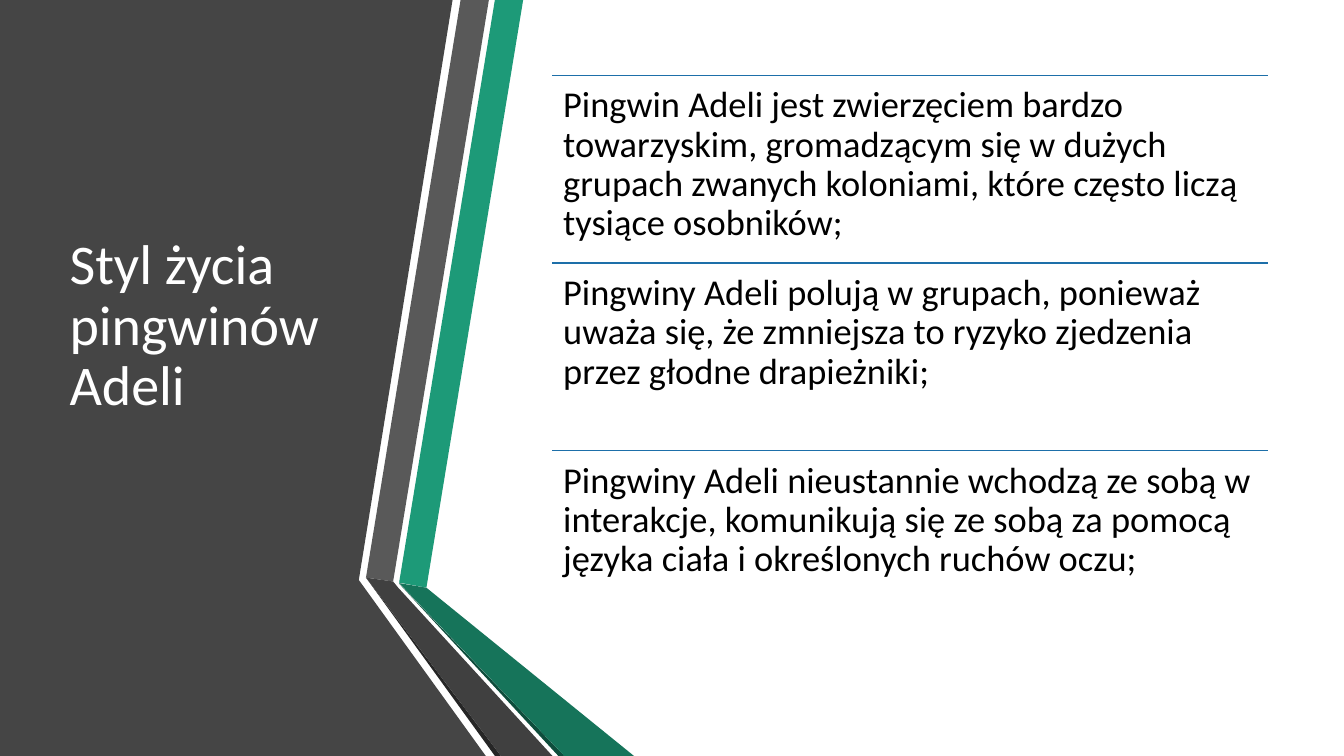
from lxml import etree
from pptx import Presentation
from pptx.dml.color import RGBColor
from pptx.enum.shapes import MSO_CONNECTOR as Connector
from pptx.enum.text import MSO_ANCHOR as Anchor, MSO_AUTO_SIZE as AutoSize, PP_ALIGN as Align
from pptx.oxml.ns import qn
from pptx.util import Pt

FONT = "Calibri"
WHITE = RGBColor(0xFF, 0xFF, 0xFF)
BLACK = RGBColor(0x00, 0x00, 0x00)
PANEL = RGBColor(0x45, 0x45, 0x45)
GREEN = RGBColor(0x1D, 0x9A, 0x78)
GREEN_FOLD = RGBColor(0x16, 0x74, 0x5A)
GREEN_EDGE = RGBColor(0x0E, 0x4D, 0x3C)
GREY = RGBColor(0x59, 0x59, 0x59)
GREY_FOLD = RGBColor(0x40, 0x40, 0x40)
GREY_EDGE = RGBColor(0x26, 0x26, 0x26)
RULE_BLUE = RGBColor(0x1D, 0x6F, 0xA9)

SLIDE_WIDTH, SLIDE_HEIGHT = 960, 540

# Outlines in points, measured from the corner of the panel
PANEL_OUTLINE = [(0, 0), (323.3, 0), (256.3, 414.3), (347, 540), (0, 540)]
RIBBON_PARTS = [
    (GREEN, [(285.1, 416.2), (304.6, 419.8), (373.7, 0), (353.5, 0)]),
    (GREY, [(349.2, 0), (329, 0), (261.4, 412.6), (280.8, 415.4)]),
    (GREY_EDGE, [(261.4, 412.6), (353.5, 540), (357.8, 540)]),
    (GREEN_EDGE, [(285.1, 416.9), (398.9, 540), (403.2, 540)]),
    (GREEN_FOLD, [(285.1, 416.5), (403.2, 540), (452.9, 540), (304.6, 419.8)]),
    (GREY_FOLD, [(394.6, 540), (284.4, 419.8), (280.8, 415.4),
                 (261.4, 412.6), (357.8, 540)]),
]

FACTS = [
    "Pingwin Adeli jest zwierzęciem bardzo towarzyskim, gromadzącym się w dużych "
    "grupach zwanych koloniami, które często liczą tysiące osobników;",
    "Pingwiny Adeli polują w grupach, ponieważ uważa się, że zmniejsza to ryzyko "
    "zjedzenia przez głodne drapieżniki;",
    "Pingwiny Adeli nieustannie wchodzą ze sobą w interakcje, komunikują się ze sobą "
    "za pomocą języka ciała i określonych ruchów oczu;",
]


def write_text(shape, text, *, size, color, anchor, inset, bottom_inset):
    frame = shape.text_frame
    frame.word_wrap = True
    frame.auto_size = AutoSize.NONE
    frame.vertical_anchor = anchor
    frame.margin_left = frame.margin_right = Pt(inset)
    frame.margin_top, frame.margin_bottom = Pt(inset), Pt(bottom_inset)
    paragraph = frame.paragraphs[0]
    paragraph.alignment = Align.LEFT
    paragraph.line_spacing = 0.9
    run = paragraph.add_run()
    run.text = text
    run.font.name, run.font.size = FONT, Pt(size)
    run.font.color.rgb = color


def add_outline(shapes, points, color, left, top):
    corners = [(Pt(left + x), Pt(top + y)) for x, y in points]
    builder = shapes.build_freeform(*corners[0])
    builder.add_line_segments(corners[1:], close=True)
    shape = builder.convert_to_shape()
    shape.shadow.inherit = False
    shape.fill.solid()
    shape.fill.fore_color.rgb = color
    shape.line.fill.background()


def add_panel(slide, left, top):
    """Dark panel with the folded ribbon along its right edge."""
    add_outline(slide.shapes, PANEL_OUTLINE, PANEL, left, top)
    ribbon = slide.shapes.add_group_shape()
    for color, points in RIBBON_PARTS:
        add_outline(ribbon.shapes, points, color, left, top)


def add_title(slide, text, left, top, width, height):
    title = slide.shapes.title
    title.left, title.top, title.width, title.height = map(Pt, (left, top, width, height))
    # The deep bottom inset lifts the title one line above the middle
    write_text(title, text, size=40, color=WHITE, anchor=Anchor.MIDDLE,
               inset=7.2, bottom_inset=50)
    # Bring the title in front of the panel
    slide.shapes._spTree.append(title._element)


def add_fact_list(slide, facts, left, top, width, height):
    """Equal rows, each with a rule above its text."""
    row_height = height / len(facts)
    group = slide.shapes.add_group_shape()
    for index, fact in enumerate(facts):
        row_top = top + index * row_height
        rule = group.shapes.add_connector(
            Connector.STRAIGHT, Pt(left), Pt(row_top), Pt(left + width), Pt(row_top))
        rule.line.color.rgb = RULE_BLUE
        rule.line.width = Pt(1)
        etree.SubElement(rule._element.spPr, qn("a:effectLst"))
        box = group.shapes.add_textbox(Pt(left), Pt(row_top), Pt(width), Pt(row_height))
        write_text(box, fact, size=26, color=BLACK, anchor=Anchor.TOP,
                   inset=7.8, bottom_inset=7.8)


def main():
    presentation = Presentation()
    presentation.slide_width = Pt(SLIDE_WIDTH)
    presentation.slide_height = Pt(SLIDE_HEIGHT)
    slide = presentation.slides.add_slide(presentation.slide_layouts[5])
    slide.background.fill.solid()
    slide.background.fill.fore_color.rgb = WHITE

    add_panel(slide, 0, 0)
    add_title(slide, "Styl życia pingwinów Adeli", 42.5, 54, 219, 402)
    add_fact_list(slide, FACTS, 394.5, 54, 511, 402)
    presentation.save("out.pptx")


if __name__ == "__main__":
    main()
